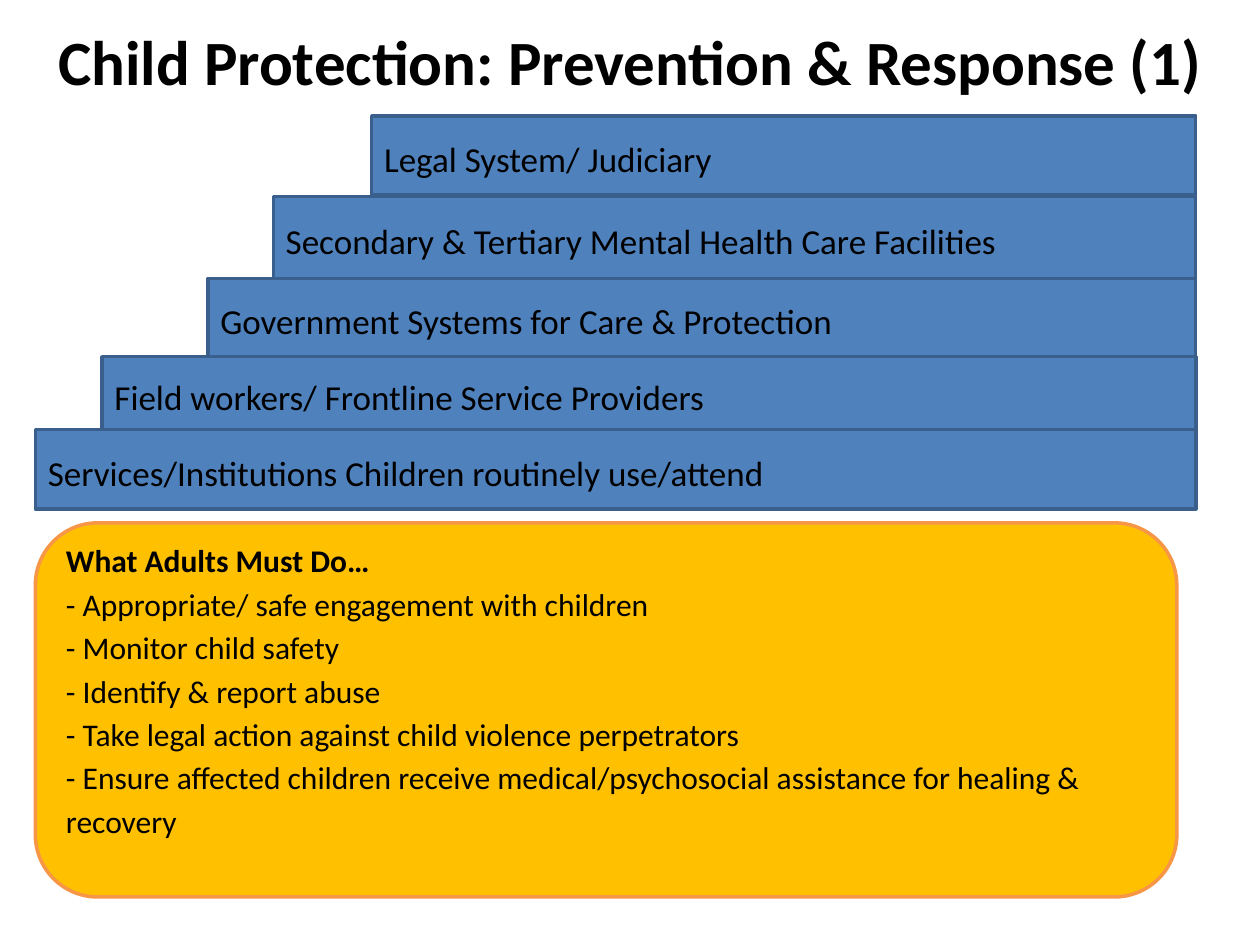
"""Build the child protection slide: stepped service bars above a panel of adult duties."""
from pptx import Presentation
from pptx.dml.color import RGBColor
from pptx.enum.shapes import MSO_SHAPE
from pptx.enum.text import MSO_ANCHOR, PP_ALIGN
from pptx.util import Pt

RECTANGLE, ROUNDED = MSO_SHAPE.RECTANGLE, MSO_SHAPE.ROUNDED_RECTANGLE
MIDDLE = MSO_ANCHOR.MIDDLE
LEFT, CENTER = PP_ALIGN.LEFT, PP_ALIGN.CENTER
BLACK = RGBColor(0x00, 0x00, 0x00)
BLUE = RGBColor(0x4F, 0x81, 0xBD)
DARK_BLUE = RGBColor(0x3A, 0x5F, 0x8C)
GOLD = RGBColor(0xFF, 0xC0, 0x00)
ORANGE = RGBColor(0xF7, 0x96, 0x46)

BARS_RIGHT = 683.3
BARS = [
    ("Legal System/ Judiciary", 212.4, 66.2, 45.4),
    ("Secondary & Tertiary Mental Health Care Facilities", 156.2, 112.3, 46.8),
    ("Government Systems for Care & Protection", 118.8, 159.1, 44.6),
    ("Field workers/ Frontline Service Providers", 58.3, 203.8, 41.8),
    ("Services/Institutions Children routinely use/attend", 20.2, 245.5, 45.4),
]
DUTIES_HEADING = "What Adults Must Do…"
DUTIES = [
    "- Appropriate/ safe engagement with children",
    "- Monitor child safety",
    "- Identify & report abuse",
    "- Take legal action against child violence perpetrators",
    "- Ensure affected children receive medical/psychosocial assistance for healing & recovery",
]


def write_paragraph(paragraph, text, size, bold=False, align=LEFT, spacing=1.15, after=0):
    paragraph.alignment = align
    paragraph.line_spacing = spacing
    paragraph.space_after = Pt(after)
    run = paragraph.add_run()
    run.text = text
    run.font.name = "Calibri"
    run.font.size = Pt(size)
    run.font.bold = bold
    run.font.color.rgb = BLACK


def add_box(shapes, kind, left, top, width, height, fill, line):
    shape = shapes.add_shape(kind, Pt(left), Pt(top), Pt(width), Pt(height))
    shape.shadow.inherit = False
    shape.fill.solid()
    shape.fill.fore_color.rgb = fill
    shape.line.color.rgb = line
    shape.line.width = Pt(2)
    shape.text_frame.word_wrap = True
    shape.text_frame.vertical_anchor = MIDDLE
    return shape


presentation = Presentation()
presentation.slide_width, presentation.slide_height = Pt(720), Pt(540)
slide = presentation.slides.add_slide(presentation.slide_layouts[5])

title = slide.shapes.title
title.left, title.top, title.width, title.height = Pt(0), Pt(9.4), Pt(720), Pt(49.7)
title.text_frame.vertical_anchor = MIDDLE
write_paragraph(title.text_frame.paragraphs[0], "Child Protection: Prevention & Response (1)",
                size=36, bold=True, align=CENTER, spacing=1.0)

group = slide.shapes.add_group_shape()
for label, left, top, height in BARS:
    bar = add_box(group.shapes, RECTANGLE, left, top, BARS_RIGHT - left, height, BLUE, DARK_BLUE)
    write_paragraph(bar.text_frame.paragraphs[0], label, size=20, after=10)

panel = add_box(group.shapes, ROUNDED, 20.2, 298.8, 652.3, 213.8, GOLD, ORANGE)
panel.text_frame.margin_bottom = Pt(29)
write_paragraph(panel.text_frame.paragraphs[0], DUTIES_HEADING, size=18, bold=True)
for duty in DUTIES:
    write_paragraph(panel.text_frame.add_paragraph(), duty, size=18)

presentation.save("out.pptx")
